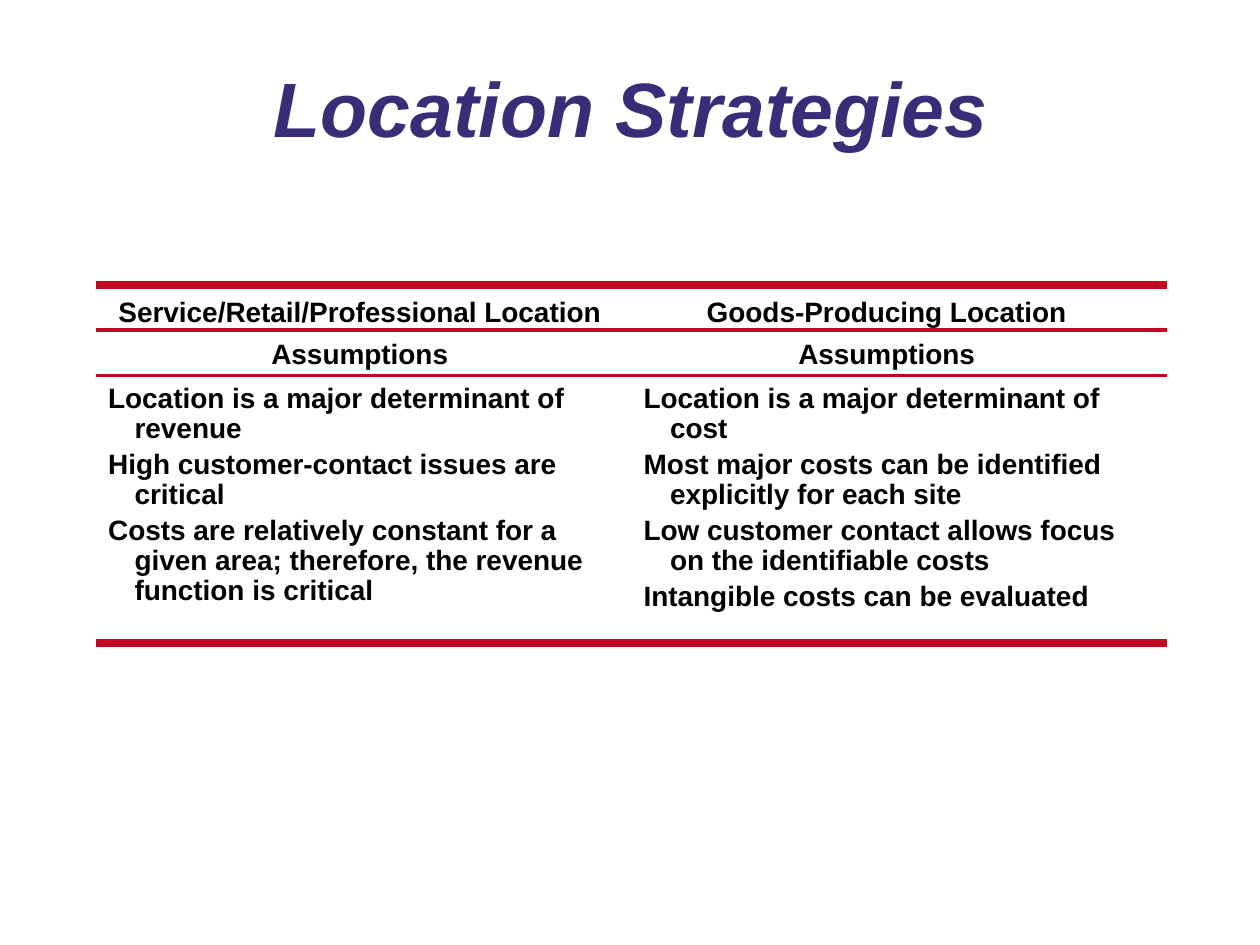
from lxml.etree import SubElement as sub
from pptx import Presentation
from pptx.dml.color import RGBColor
from pptx.enum.shapes import MSO_CONNECTOR as LINK
from pptx.enum.text import MSO_ANCHOR as ANCHOR, PP_ALIGN as ALIGN
from pptx.oxml.ns import qn
from pptx.util import Inches, Pt

BLACK = RGBColor(0x00, 0x00, 0x00)
PURPLE = RGBColor(0x3A, 0x2C, 0x76)
RED = RGBColor(0xBF, 0x09, 0x22)

WIDE, HIGH = 10, 7.5
LEFT, SPAN = 0.076 * WIDE, 0.85 * WIDE
HEADS = ["Service/Retail/Professional Location", "Goods-Producing Location"]
SUBHEADS = ["Assumptions", "Assumptions"]
POINTS = [
    ["Location is a major determinant of revenue",
     "High customer-contact issues are critical",
     "Costs are relatively constant for a given area; "
     "therefore, the revenue function is critical"],
    ["Location is a major determinant of cost",
     "Most major costs can be identified explicitly for each site",
     "Low customer contact allows focus on the identifiable costs",
     "Intangible costs can be evaluated"],
]


def add_text(slide, box, lines, size=16, color=BLACK, italic=False,
             align=ALIGN.LEFT, anchor=ANCHOR.TOP, spacing=1.0, before=0,
             hang=0, tabs=()):
    frame = slide.shapes.add_textbox(*map(Inches, box)).text_frame
    frame.word_wrap = True
    frame.vertical_anchor = anchor
    for i, line in enumerate(lines):
        para = frame.add_paragraph() if i else frame.paragraphs[0]
        para.alignment = align
        para.line_spacing = spacing
        para.space_before = Pt(before)
        run = para.add_run()
        run.text = line
        font = run.font
        font.name, font.size, font.bold = "Arial", Pt(size), True
        font.italic = italic
        font.color.rgb = color
        props = para._p.get_or_add_pPr()
        if hang:
            props.set("marL", str(Inches(hang)))
            props.set("indent", str(-Inches(hang)))
        if tabs:
            stops = sub(props, qn("a:tabLst"))
            for tab in tabs:
                sub(stops, qn("a:tab"), pos=str(Inches(tab)), algn="ctr")


def add_rule(slide, left, top, width, weight):
    ends = map(Inches, (left, top, left + width, top))
    rule = slide.shapes.add_connector(LINK.STRAIGHT, *ends)
    rule.line.color.rgb = RED
    rule.line.width = Pt(weight)
    sub(rule._element.spPr, qn("a:effectLst"))


def add_title(slide, box):
    add_text(slide, box, ["Location Strategies"], size=44, color=PURPLE,
             italic=True, align=ALIGN.CENTER, anchor=ANCHOR.MIDDLE,
             spacing=0.8)


def add_columns(slide, left, top, width, height):
    """Two headed columns of points between red rules."""
    row, col = 0.36, width / 2
    rows = ["".join("\t" + name for name in names)
            for names in (HEADS, SUBHEADS)]
    add_text(slide, (left, top - 0.04, width, 0.77), rows, spacing=1.25,
             tabs=(0.235 * width, 0.727 * width))
    body = top + 2 * row
    for i, points in enumerate(POINTS):
        add_text(slide, (left + i * col, body + 0.02, col, 1.95), points,
                 spacing=0.9, before=3.2, hang=0.21)
    for drop, weight in ((0, 4.5), (row, 2.25), (2 * row, 2.25),
                         (height, 4.5)):
        add_rule(slide, left, top + drop, width, weight)


def main():
    deck = Presentation()
    deck.slide_width, deck.slide_height = Inches(WIDE), Inches(HIGH)
    slide = deck.slides.add_slide(deck.slide_layouts[6])
    add_title(slide, (LEFT, HIGH / 15, SPAN, HIGH / 9))
    add_columns(slide, LEFT, 2.26, SPAN, 2.84)
    deck.save("out.pptx")


if __name__ == "__main__":
    main()
